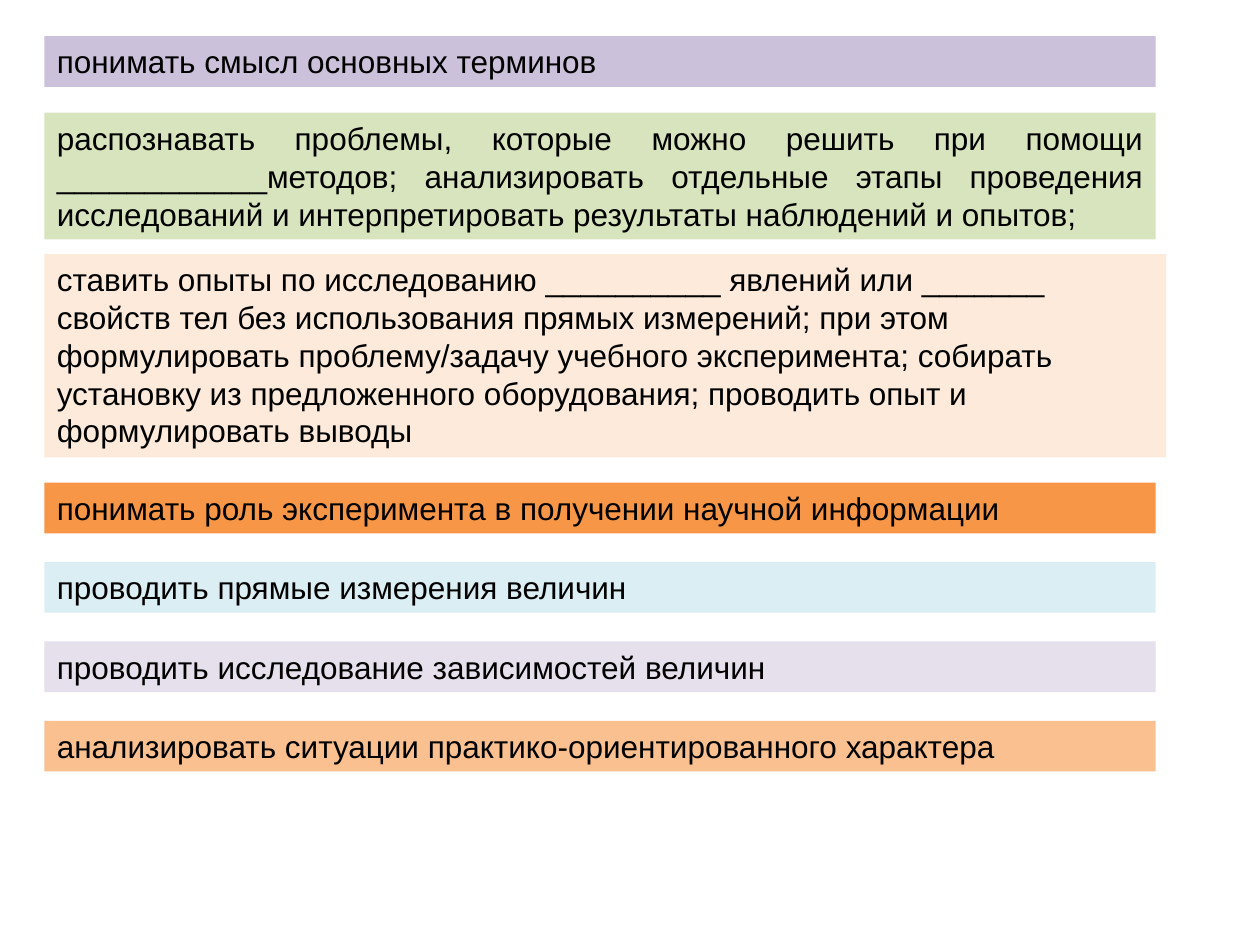
from pptx import Presentation
from pptx.dml.color import RGBColor
from pptx.enum import shapes, text
from pptx.util import Pt

LILAC = RGBColor(0xCC, 0xC1, 0xDA)
GREEN = RGBColor(0xD7, 0xE4, 0xBD)
PEACH = RGBColor(0xFD, 0xEA, 0xDA)
ORANGE = RGBColor(0xF7, 0x96, 0x46)
BLUE = RGBColor(0xDB, 0xEE, 0xF4)
PALE_LILAC = RGBColor(0xE6, 0xE0, 0xEC)
APRICOT = RGBColor(0xFA, 0xC0, 0x90)
BLACK = RGBColor(0, 0, 0)

LEFT, WIDTH, WIDE = 25.4, 635, 641
LINE_HEIGHT, INSET_X, INSET_Y = 21.8, 7.2, 3.6
FIRST_SKILL_TOP, SKILL_PITCH = 275.8, 45.36

TOP, MIDDLE = text.MSO_ANCHOR.TOP, text.MSO_ANCHOR.MIDDLE
ALIGN_LEFT, JUSTIFY = text.PP_ALIGN.LEFT, text.PP_ALIGN.JUSTIFY

# wording, fill, top, width, number of lines, alignment, anchor
bars = [
    ("понимать смысл основных терминов", LILAC, 20.6, WIDTH, 1, ALIGN_LEFT, TOP),
    ("распознавать проблемы, которые можно решить при помощи "
     "____________методов; анализировать отдельные этапы проведения "
     "исследований и интерпретировать результаты наблюдений и опытов;",
     GREEN, 64.3, WIDTH, 3, JUSTIFY, MIDDLE),
    ("ставить опыты по исследованию __________ явлений или _______ "
     "свойств тел без использования прямых измерений; при этом "
     "формулировать проблему/задачу учебного эксперимента; собирать "
     "установку из предложенного оборудования; проводить опыт и "
     "формулировать выводы",
     PEACH, 145.2, WIDE, 5, ALIGN_LEFT, TOP),
]
skills = [
    ("понимать роль эксперимента в получении научной информации", ORANGE),
    ("проводить прямые измерения величин", BLUE),
    ("проводить исследование зависимостей величин", PALE_LILAC),
    ("анализировать ситуации практико-ориентированного характера", APRICOT),
]
bars += [(wording, fill, FIRST_SKILL_TOP + i * SKILL_PITCH, WIDTH, 1, ALIGN_LEFT, TOP)
         for i, (wording, fill) in enumerate(skills)]

prs = Presentation()
prs.slide_width, prs.slide_height = Pt(720), Pt(540)
s = prs.slides.add_slide(prs.slide_layouts[6])

for wording, fill, top, width, lines, align, anchor in bars:
    height = lines * LINE_HEIGHT + 2 * INSET_Y
    sp = s.shapes.add_shape(shapes.MSO_SHAPE.RECTANGLE,
                            Pt(LEFT), Pt(top), Pt(width), Pt(height))
    sp.shadow.inherit = False
    sp.fill.solid()
    sp.fill.fore_color.rgb = fill
    sp.line.fill.background()
    tf = sp.text_frame
    tf.word_wrap = True
    tf.auto_size = text.MSO_AUTO_SIZE.SHAPE_TO_FIT_TEXT
    tf.vertical_anchor = anchor
    tf.margin_left = tf.margin_right = Pt(INSET_X)
    tf.margin_top = tf.margin_bottom = Pt(INSET_Y)
    p = tf.paragraphs[0]
    p.alignment = align
    r = p.add_run()
    r.text = wording
    r.font.name = "Arial"
    r.font.size = Pt(18)
    r.font.color.rgb = BLACK

prs.save("out.pptx")
